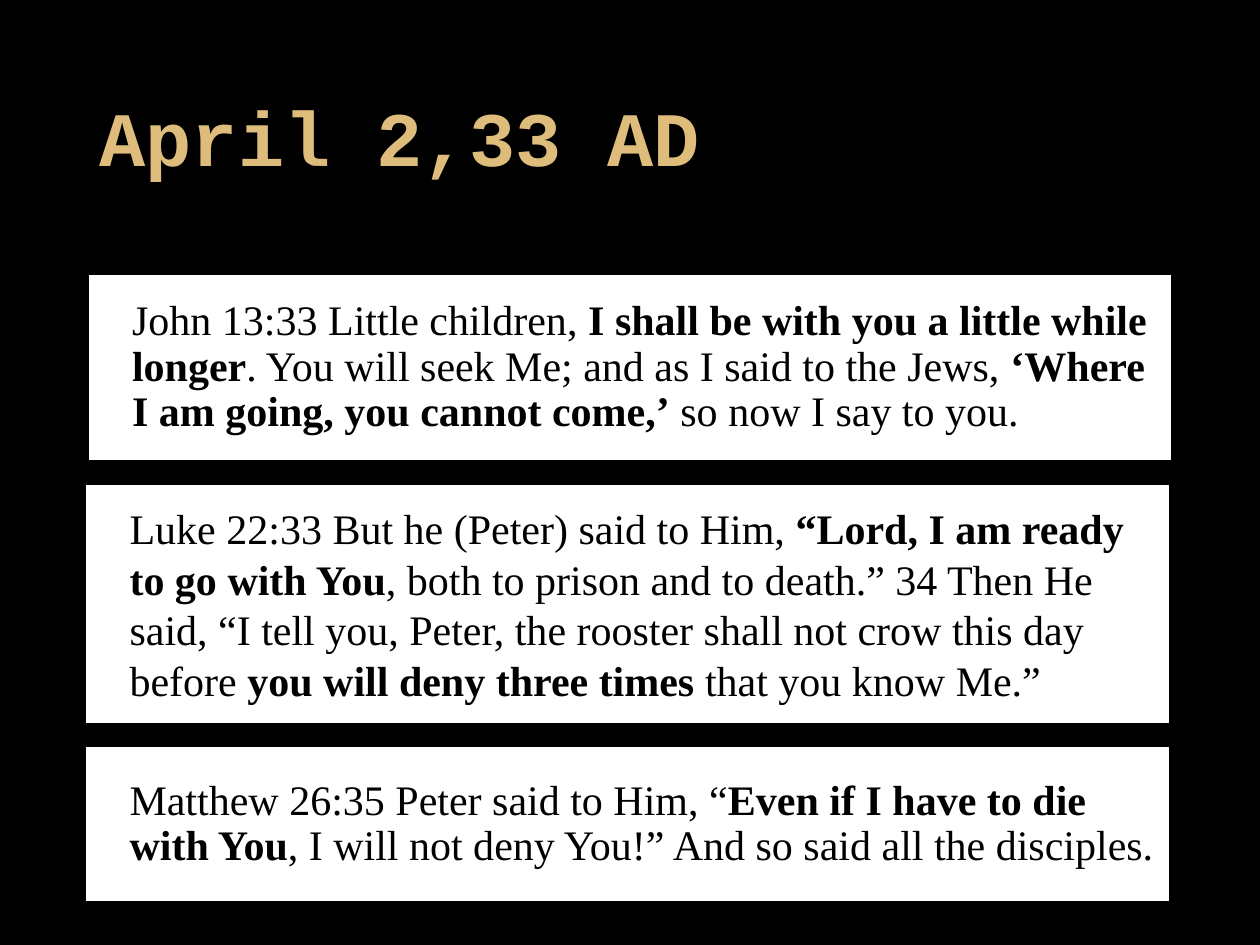
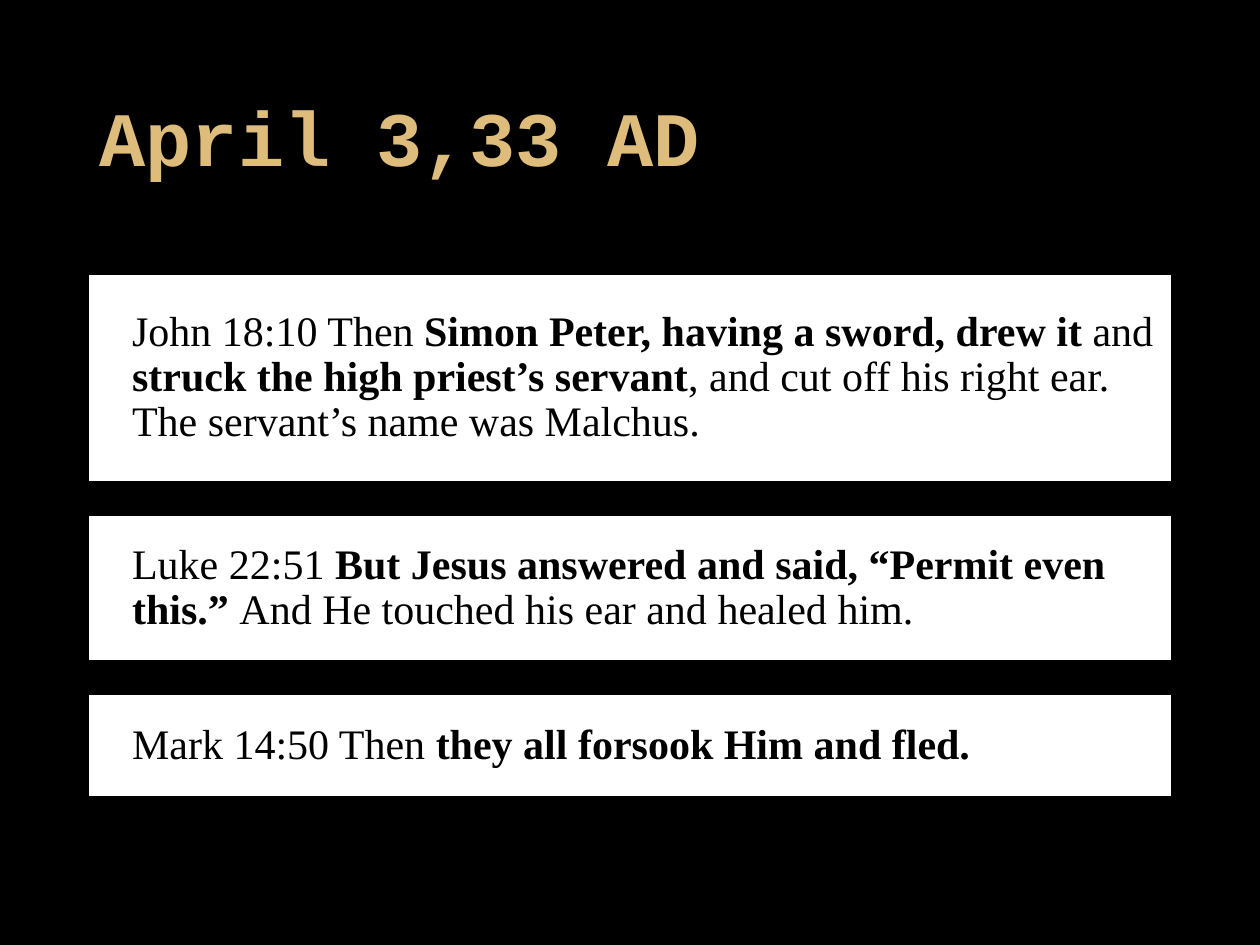
"""Build two black slides of dated scripture passages on white cards."""
from pptx import Presentation, util as u
from pptx.dml.color import RGBColor
from pptx.enum import shapes, text

ROW = u.Inches(1 / 12)
EDGE, WIDE = 0.69, 8.62
TOP = 26
BLACK, WHITE, GOLD = "000000", "FFFFFF", "DEBD7C"


def paint(color, code):
    color.rgb = RGBColor.from_string(code)


def style(font, name, size, code):
    font.name, font.size = name, u.Pt(size)
    paint(font.color, code)


# Each day: title, gap in rows, cards of (left edge, rows, verse with *bold* parts)
days = [
    ("April 2,33 AD", 2, [
        (EDGE, 18, "John 13:33 Little children, *I shall be with you a little while longer*"
         ". You will seek Me; and as I said to the Jews, "
         "*‘Where I am going, you cannot come,’* so now I say to you."),
        (0.67, 23, "Luke 22:33 But he (Peter) said to Him, *“Lord, I am ready to go with You*"
         ", both to prison and to death.” 34 Then He said, “I tell you, Peter, "
         "the rooster shall not crow this day before *you will deny three times *"
         "that you know Me.”"),
        (0.67, 15, "Matthew 26:35 Peter said to Him, “*Even if I have to die with You*"
         ", I will not deny You!” And so said all the disciples."),
    ]),
    ("April 3,33 AD", 3, [
        (EDGE, 20, "John 18:10 Then *Simon Peter, having a sword, drew it *and "
         "*struck the high priest’s servant*, and cut off his right ear. "
         "The servant’s name was Malchus."),
        (EDGE, 14, "Luke 22:51 *But Jesus answered and said, “Permit even this.” *"
         "And He touched his ear and healed him."),
        (EDGE, 10, "Mark 14:50 Then *they all forsook Him and fled.*"),
    ]),
]

deck = Presentation()
deck.slide_width, deck.slide_height = u.Inches(10), u.Inches(7.5)
back = deck.slide_master.background.fill
back.solid()
paint(back.fore_color, BLACK)

for date, gap, cards in days:
    slide = deck.slides.add_slide(deck.slide_layouts[5])
    title = slide.shapes.title
    title.left, title.top = u.Inches(EDGE), u.Inches(0.4)
    title.width, title.height = u.Inches(WIDE), u.Inches(1.45)
    frame = title.text_frame
    frame.text = date
    frame.auto_size = text.MSO_AUTO_SIZE.NONE
    frame.vertical_anchor = text.MSO_ANCHOR.MIDDLE
    para = frame.paragraphs[0]
    para.alignment, para.line_spacing = text.PP_ALIGN.LEFT, 0.9
    style(para.runs[0].font, "Courier New", 44, GOLD)
    para.runs[0].font.bold = True

    row = TOP
    for left, rows, verse in cards:
        card = slide.shapes.add_shape(
            shapes.MSO_SHAPE.RECTANGLE, u.Inches(left), row * ROW, u.Inches(WIDE), rows * ROW)
        card.shadow.inherit = False
        card.fill.solid()
        paint(card.fill.fore_color, WHITE)
        paint(card.line.color, BLACK)
        card.line.width = u.Pt(2)
        frame = card.text_frame
        frame.word_wrap = True
        frame.vertical_anchor = text.MSO_ANCHOR.MIDDLE
        para = frame.paragraphs[0]
        para.alignment = text.PP_ALIGN.LEFT
        para.line_spacing = 1.0 if verse.startswith("Luke 22:33") else 0.9
        para._p.get_or_add_pPr().set("marL", str(u.Inches(0.26)))
        for i, part in enumerate(verse.split("*")):
            if part:
                run = para.add_run()
                run.text = part
                style(run.font, "Times New Roman", 24, BLACK)
                run.font.bold = i % 2 == 1
        row += rows + gap

deck.save("out.pptx")
